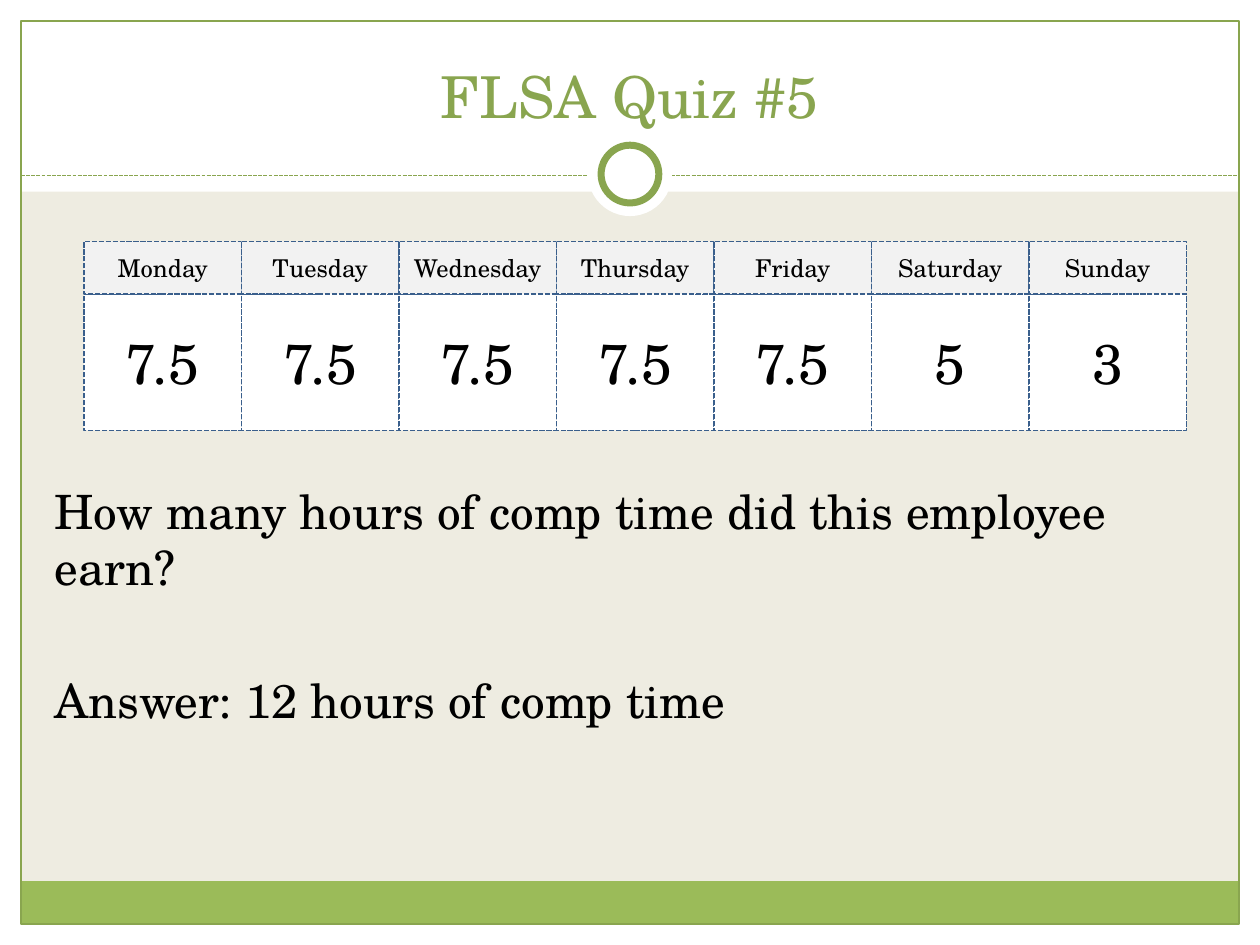
from pptx import Presentation
from pptx.dml.color import RGBColor
from pptx.enum.dml import MSO_LINE
from pptx.enum.shapes import MSO_CONNECTOR, MSO_SHAPE
from pptx.enum.text import MSO_ANCHOR, PP_ALIGN
from pptx.oxml.ns import qn
from pptx.util import Pt
from lxml.etree import SubElement

FONT = "TeX Gyre Schola"
WIDTH, HEIGHT = 720, 540
EDGE = 12
WHITE, BLACK, GREEN = "FFFFFF", "000000", "89A54F"
HOURS = {"Monday": "7.5", "Tuesday": "7.5", "Wednesday": "7.5", "Thursday": "7.5",
         "Friday": "7.5", "Saturday": "5", "Sunday": "3"}


def color(value):
    return RGBColor.from_string(value)


def style_line(line, value, width, dash=None):
    line.color.rgb = color(value)
    line.width = Pt(width)
    if dash:
        line.dash_style = dash


def add_block(page, box, fill=None, line=None, kind=MSO_SHAPE.RECTANGLE):
    block = page.shapes.add_shape(kind, *map(Pt, box))
    block.shadow.inherit = False
    if fill:
        block.fill.solid()
        block.fill.fore_color.rgb = color(fill)
    else:
        block.fill.background()
    if line:
        style_line(block.line, *line)
    else:
        block.line.fill.background()
    return block


def write(shape, lines, size, value=BLACK, align=PP_ALIGN.CENTER, space_after=0, **frame_format):
    frame = shape.text_frame
    settings = {"word_wrap": True, "vertical_anchor": MSO_ANCHOR.MIDDLE, **frame_format}
    for name, setting in settings.items():
        setattr(frame, name, setting)
    for index, text in enumerate(lines):
        para = frame.add_paragraph() if index else frame.paragraphs[0]
        para.alignment = align
        para.space_after = Pt(space_after)
        span = para.add_run()
        span.text = text
        for name, setting in {"name": FONT, "size": Pt(size)}.items():
            setattr(span.font, name, setting)
        span.font.color.rgb = color(value)


def add_frame(page, box):
    left, top, width, height = box
    inner_width, inner_height = width - 2 * EDGE, height - 2 * EDGE
    # White margins and header band
    for band in [(left, top + height - EDGE, width, EDGE), (left, top, width, 109.5),
                 (left, top, EDGE, height), (left + width - EDGE, top, EDGE, height)]:
        add_block(page, band, WHITE)
    # Green footer bar and thin border
    add_block(page, (left + EDGE, top + 503.5, inner_width, 24.5), "9BBB59")
    add_block(page, (left + EDGE, top + EDGE, inner_width, inner_height), line=(GREEN, 0.75))
    # Dashed divider under the title
    rule_y = top + 100.5
    divider = page.shapes.add_connector(
        MSO_CONNECTOR.STRAIGHT, Pt(left + EDGE), Pt(rule_y), Pt(left + width - EDGE), Pt(rule_y))
    style_line(divider.line, GREEN, 0.75, MSO_LINE.SQUARE_DOT)
    SubElement(divider.element.spPr, qn("a:effectLst"))
    # Ring on the divider
    center_x, center_y = left + width / 2, top + 99.5
    for size, line in [(48, None), (33, (GREEN, 4))]:
        add_block(page, (center_x - size / 2, center_y - size / 2, size, size),
                  WHITE, line, MSO_SHAPE.OVAL)


def add_title(page, box, text):
    title = page.shapes.add_textbox(*map(Pt, box))
    write(title, [text], 33, GREEN, vertical_anchor=MSO_ANCHOR.BOTTOM)


def add_question(page, box, lines):
    question = page.shapes.add_textbox(*map(Pt, box))
    # The top inset leaves room for the hours grid
    write(question, lines, 27, align=PP_ALIGN.LEFT, space_after=43.4,
          vertical_anchor=MSO_ANCHOR.TOP, margin_top=Pt(155.4))


def add_hours_grid(page, box, hours):
    left, top, width, height = box
    cell_width, header_height = width / len(hours), 30
    rows = [(hours.values(), top + header_height, height - header_height, WHITE, 32),
            (hours.keys(), top, header_height, "F2F2F2", 14)]
    for texts, row_top, row_height, fill, size in rows:
        for column, text in enumerate(texts):
            cell = add_block(page, (left + column * cell_width, row_top, cell_width, row_height),
                             fill, ("3A5F8C", 1, MSO_LINE.SQUARE_DOT))
            write(cell, [text], size)


def main():
    deck = Presentation()
    deck.slide_width, deck.slide_height = Pt(WIDTH), Pt(HEIGHT)
    page = deck.slides.add_slide(deck.slide_layouts[6])
    page.background.fill.solid()
    page.background.fill.fore_color.rgb = color("EEECE1")

    add_frame(page, (0, 0, WIDTH, HEIGHT))
    add_title(page, (24, 18, 672, 60), "FLSA Quiz #5")
    add_question(page, (24, 120, 669.5, 360),
                 ["How many hours of comp time did this employee earn?",
                  "Answer: 12 hours of comp time"])
    add_hours_grid(page, (48, 138, 630, 108), HOURS)
    deck.save("out.pptx")


if __name__ == "__main__":
    main()
